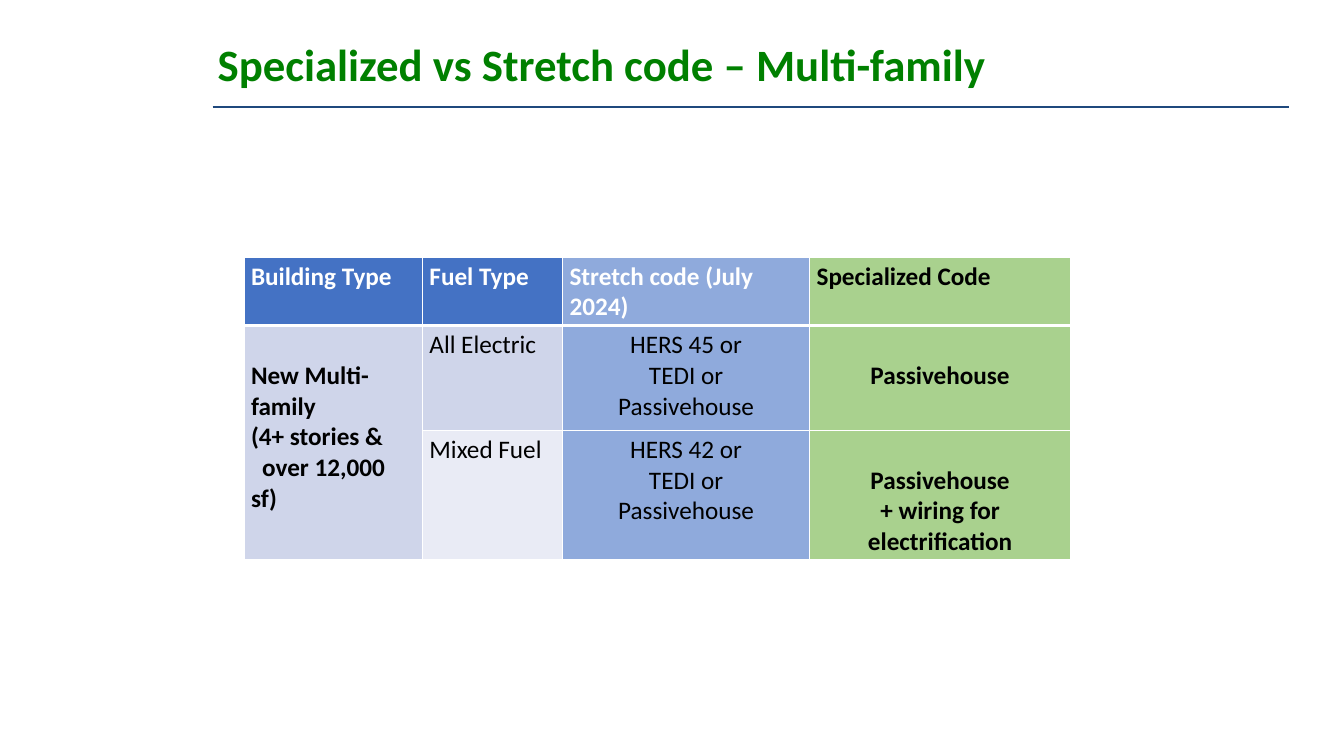
"""Build the slide comparing specialized and stretch codes for multi-family buildings."""
from dataclasses import dataclass

from lxml import etree
from pptx import Presentation, util as u
from pptx.dml.color import RGBColor
from pptx.enum import shapes, text
from pptx.oxml.ns import qn


@dataclass(frozen=True)
class Theme:
    font: str = "Calibri"
    title_size: float = 32
    body_size: float = 18
    title: str = "008000"
    rule: str = "1F497D"
    white: str = "FFFFFF"
    black: str = "000000"
    header: str = "4472C4"
    band: str = "CFD5EA"
    light_band: str = "E9EBF5"
    stretch: str = "8FAADC"
    specialized: str = "A9D18E"


THEME = Theme()
TITLE = "Specialized vs Stretch code – Multi-family"
HEADERS = ["Building Type", "Fuel Type", "Stretch code (July 2024)", "Specialized Code"]
BUILDING = ["New Multi-family", "(4+ stories &", "over 12,000 sf)"]
FUELS = [
    (["All Electric"], ["HERS 45 or", "TEDI or", "Passivehouse"], ["Passivehouse"]),
    (["Mixed Fuel"], ["HERS 42 or", "TEDI or", "Passivehouse"],
     ["Passivehouse", "+ wiring for electrification"]),
]
HEADER_FILLS = [THEME.header, THEME.header, THEME.stretch, THEME.specialized]
FUEL_BANDS = [THEME.band, THEME.light_band]
COLUMNS = [1.77, 1.39, 2.45, 2.59]
ROWS = [0.68, 1.04, 1.27]
INSET_X, INSET_Y, LINE_PITCH = 0.07, 0.04, 0.305


def rgb(value):
    return RGBColor.from_string(value)


def write(frame, lines, size=THEME.body_size, color=THEME.black, bold=False,
          align=text.PP_ALIGN.LEFT, spacing=None):
    for index, line in enumerate(lines):
        para = frame.paragraphs[0] if index == 0 else frame.add_paragraph()
        para.alignment = align
        para.line_spacing = spacing
        span = para.add_run()
        span.text = line
        font = span.font
        font.name, font.size, font.bold = THEME.font, u.Pt(size), bold
        font.color.rgb = rgb(color)


def set_borders(cell, top, bottom):
    properties = cell._tc.get_or_add_tcPr()
    for index, (side, points) in enumerate(
            [("lnL", 1), ("lnR", 1), ("lnT", top), ("lnB", bottom)]):
        line = etree.Element(qn(f"a:{side}"), w=str(u.Pt(points)))
        fill = etree.SubElement(line, qn("a:solidFill"))
        etree.SubElement(fill, qn("a:srgbClr"), val=THEME.white)
        properties.insert(index, line)


def fill_cell(table, row, column, lines, fill, skip=0, **style):
    cell = table.cell(row, column)
    cell.margin_left = cell.margin_right = u.Inches(INSET_X)
    cell.margin_top = u.Inches(INSET_Y + skip * LINE_PITCH)
    cell.margin_bottom = u.Inches(INSET_Y)
    cell.fill.solid()
    cell.fill.fore_color.rgb = rgb(fill)
    set_borders(cell, top=3 if row == 1 else 1, bottom=3 if row == 0 else 1)
    write(cell.text_frame, lines, **style)
    return cell


def add_title(page):
    box = page.shapes.add_textbox(*map(u.Inches, (2.06, 0.25, 10.61, 0.83)))
    frame = box.text_frame
    frame.word_wrap = True
    frame.vertical_anchor = text.MSO_ANCHOR.MIDDLE
    write(frame, [TITLE], size=THEME.title_size, color=THEME.title, bold=True, spacing=0.9)
    rule = page.shapes.add_connector(
        shapes.MSO_CONNECTOR.STRAIGHT, *map(u.Inches, (2.11, 1.06, 12.78, 1.06)))
    rule.line.color.rgb = rgb(THEME.rule)
    rule.line.width = u.Pt(1.5)
    etree.SubElement(rule._element.spPr, qn("a:effectLst"))


def add_code_table(page):
    table = page.shapes.add_table(
        len(ROWS), len(COLUMNS),
        *map(u.Inches, (2.42, 2.55, sum(COLUMNS), sum(ROWS)))).table
    table.horz_banding = False
    for column, width in zip(table.columns, COLUMNS):
        column.width = u.Inches(width)
    for row, height in zip(table.rows, ROWS):
        row.height = u.Inches(height)

    for column, (label, fill) in enumerate(zip(HEADERS, HEADER_FILLS)):
        color = THEME.black if fill == THEME.specialized else THEME.white
        fill_cell(table, 0, column, [label], fill, color=color, bold=True)

    building = fill_cell(table, 1, 0, BUILDING, THEME.band, skip=1, bold=True)
    last = building.text_frame.paragraphs[-1]
    last._p.get_or_add_pPr().set("indent", str(u.Inches(0.11)))
    fill_cell(table, 2, 0, [], THEME.band)
    building.merge(table.cell(2, 0))

    center = text.PP_ALIGN.CENTER
    for row, ((fuel, stretch, specialized), band) in enumerate(zip(FUELS, FUEL_BANDS), 1):
        fill_cell(table, row, 1, fuel, band)
        fill_cell(table, row, 2, stretch, THEME.stretch, align=center)
        fill_cell(table, row, 3, specialized, THEME.specialized, skip=1,
                  bold=True, align=center)


def main():
    deck = Presentation()
    deck.slide_width, deck.slide_height = u.Inches(13.33), u.Inches(7.5)
    page = deck.slides.add_slide(deck.slide_layouts[6])
    add_title(page)
    add_code_table(page)
    deck.save("out.pptx")


if __name__ == "__main__":
    main()
